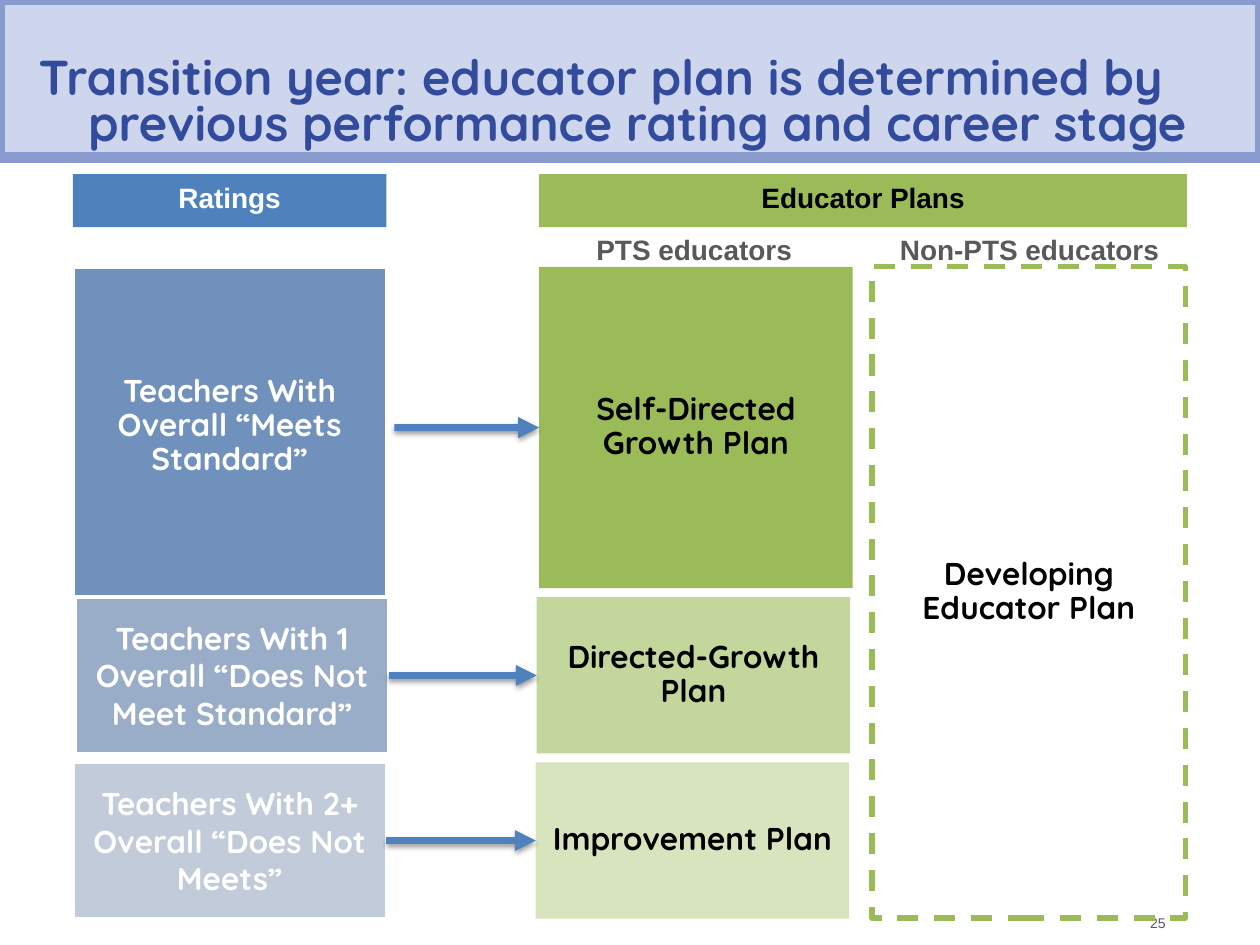
"""Build the slide that maps performance ratings to educator plans."""
import dataclasses
import typing

import pptx
import pptx.dml.color
import pptx.enum.dml
import pptx.enum.shapes
import pptx.enum.text
import pptx.oxml
import pptx.oxml.ns
import pptx.util

Cm = pptx.util.Cm
Pt = pptx.util.Pt
Align = pptx.enum.text.PP_ALIGN
Anchor = pptx.enum.text.MSO_ANCHOR
Edges = typing.Tuple[float, float, float, float]

HUES = {
    "white": "FFFFFF", "black": "000000", "gray": "595959",
    "navy": "334B9C", "pale": "CED6ED", "rim": "899ACE", "blue": "4F81BD",
    "high": "7091BB", "mid": "9AADC8", "low": "C1CBD9",
    "green": "9BBB59", "lime": "C3D69B", "mint": "D7E4BD",
}
SHADE = (
    '<a:effectLst xmlns:a="http://schemas.openxmlformats.org/drawingml/2006/main">'
    '<a:outerShdw blurRad="40000" dist="20000" dir="5400000" rotWithShape="0">'
    '<a:srgbClr val="000000"><a:alpha val="38000"/></a:srgbClr>'
    '</a:outerShdw></a:effectLst>'
)
WIDE, LOW = 6.32, 3.15
TOPS = (5.38, 12.04, 15.37)
RATE, PLAN, NEW = 1.47, 10.87, 17.58


@dataclasses.dataclass
class Look:
    """Text style of a box."""
    ink: str
    size: int
    font: str = "Quicksand"
    bold: bool = True
    align: Align = Align.CENTER
    anchor: Anchor = Anchor.MIDDLE
    space: typing.Union[float, Pt] = 1.0
    inset: Edges = (0.18, 0.1, 0.18, 0.1)


@dataclasses.dataclass
class Box:
    """A rectangle with its text."""
    at: Edges
    words: str
    look: Look
    fill: typing.Optional[str] = None
    line: typing.Optional[str] = None
    width: float = 2
    dash: bool = False


def hue(name: str) -> pptx.dml.color.RGBColor:
    """Give the colour of a name."""
    return pptx.dml.color.RGBColor.from_string(HUES[name])


def write(shape, words: str, look: Look) -> None:
    """Set the text of a shape."""
    frame = shape.text_frame
    frame.word_wrap = True
    frame.vertical_anchor = look.anchor
    (frame.margin_left, frame.margin_top,
     frame.margin_right, frame.margin_bottom) = map(Cm, look.inset)
    para = frame.paragraphs[0]
    para.alignment = look.align
    para.line_spacing = look.space
    run = para.add_run()
    run.text = words
    run.font.name = look.font
    run.font.size = Pt(look.size)
    run.font.bold = look.bold
    run.font.color.rgb = hue(look.ink)


def draw(slide, box: Box):
    """Draw a box, as a plain text box if it has no fill or line."""
    place = [Cm(n) for n in box.at]
    if not (box.fill or box.line):
        shape = slide.shapes.add_textbox(*place)
    else:
        kind = pptx.enum.shapes.MSO_SHAPE.RECTANGLE
        shape = slide.shapes.add_shape(kind, *place)
        shape.shadow.inherit = False
        if box.fill:
            shape.fill.solid()
            shape.fill.fore_color.rgb = hue(box.fill)
        else:
            shape.fill.background()
        if box.line:
            shape.line.color.rgb = hue(box.line)
            shape.line.width = Pt(box.width)
        else:
            shape.line.fill.background()
        if box.dash:
            shape.line.dash_style = pptx.enum.dml.MSO_LINE.DASH
    write(shape, box.words, box.look)
    return shape


def link(slide, rate, plan, start: typing.Optional[Edges] = None) -> None:
    """Draw an arrow from a rating to a plan, or from a free start point."""
    kind = pptx.enum.shapes.MSO_CONNECTOR.STRAIGHT
    left, top = map(Cm, start or (0, 0))
    arrow = slide.shapes.add_connector(kind, left, top, left, top)
    if not start:
        arrow.begin_connect(rate, 3)
    arrow.end_connect(plan, 1)
    arrow.line.color.rgb = hue("blue")
    arrow.line.width = Pt(4)
    tip = pptx.oxml.parse_xml(
        '<a:tailEnd xmlns:a="http://schemas.openxmlformats.org/drawingml/2006/main"'
        ' type="triangle"/>')
    arrow.line._get_or_add_ln().append(tip)
    arrow._element.spPr.append(pptx.oxml.parse_xml(SHADE))


def main() -> None:
    """Build and save the slide."""
    deck = pptx.Presentation()
    deck.slide_width, deck.slide_height = Cm(25.4), Cm(19.05)
    slide = deck.slides.add_slide(deck.slide_layouts[6])

    page = Look("gray", 8, "Arial", False, Align.RIGHT, inset=(0.25, 0.13, 0.25, 0.13))
    draw(slide, Box((22.3, 18.31, 1.45, 0.61), "25", page))

    head = Look("navy", 28, align=Align.LEFT, anchor=Anchor.BOTTOM,
                space=Pt(26), inset=(0.51, 0, 1.27, 0.13))
    title = draw(slide, Box(
        (0, 0, 25.4, 3.18),
        "Transition year: educator plan is determined by "
        "previous performance rating and career stage",
        head, "pale", "rim", 6))
    props = title.text_frame.paragraphs[0]._p.get_or_add_pPr()
    props.set("marL", str(Cm(1.27)))
    props.set("indent", str(Cm(-1)))

    label = Look("gray", 16, "Arial", anchor=Anchor.TOP, inset=(0.25, 0.13, 0.25, 0.13))
    light = dataclasses.replace(label, ink="white")
    dark = dataclasses.replace(label, ink="black")
    for box in (
        Box((RATE, 3.51, WIDE, 1.07), "Ratings", light, "blue"),
        Box((PLAN, 3.51, 13.06, 1.07), "Educator Plans", dark, "green"),
        Box((PLAN, 4.55, 6.25, 1.27), "PTS educators", label),
        Box((NEW, 4.55, 6.35, 1.27), "Non-PTS educators", label),
    ):
        draw(slide, box)

    text = Look("white", 18)
    first = dataclasses.replace(text, space=0.9, inset=(0.18, 0.1, 0.18, 0.6))
    rates = [draw(slide, box) for box in (
        Box((RATE, TOPS[0], WIDE, 6.91), "Teachers With Overall “Meets Standard”",
            first, "high", "white"),
        Box((1.52, TOPS[1], WIDE, LOW), "Teachers With 1 Overall “Does Not Meet Standard”",
            text, "mid", "white"),
        Box((RATE, TOPS[2], WIDE, LOW), "Teachers With 2+ Overall “Does Not Meets”",
            text, "low", "white"),
    )]

    bold = Look("black", 18, space=0.9)
    plans = [draw(slide, box) for box in (
        Box((PLAN, TOPS[0], WIDE, 6.48), "Self-Directed Growth Plan", bold, "green"),
        Box((10.82, TOPS[1], WIDE, LOW), "Directed-Growth Plan", bold, "lime"),
        Box((10.8, TOPS[2], WIDE, LOW), "Improvement Plan", bold, "mint"),
    )]
    draw(slide, Box((NEW, TOPS[0], WIDE, 13.13), "Developing Educator Plan",
                    bold, line="green", width=3, dash=True))

    starts = ((7.95, 8.62), None, None)
    for rate, plan, start in zip(rates, plans, starts):
        link(slide, rate, plan, start)

    deck.save("out.pptx")


if __name__ == "__main__":
    main()
